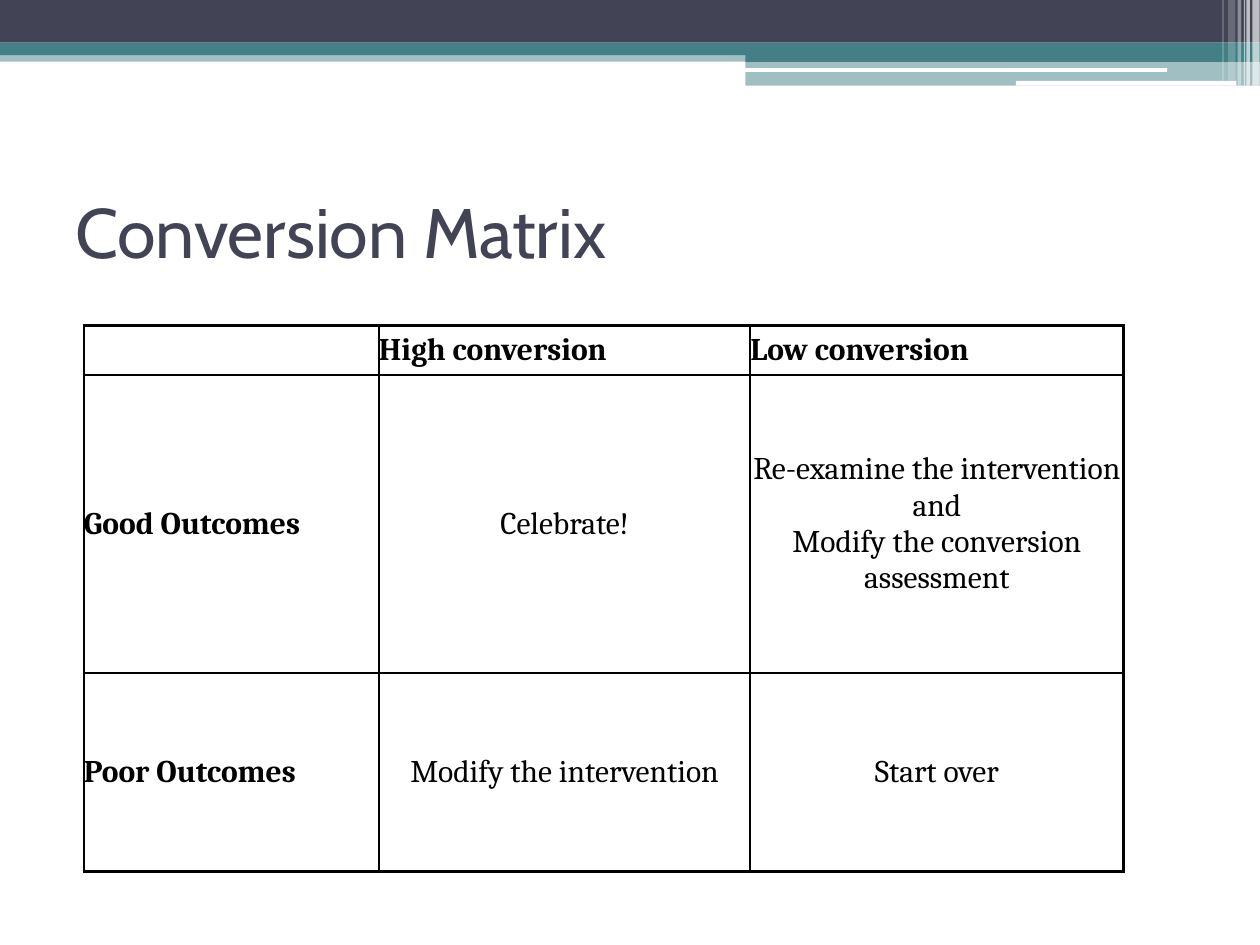
from lxml.etree import SubElement
from pptx import Presentation
from pptx.dml.color import RGBColor
from pptx.enum.shapes import MSO_SHAPE as Preset
from pptx.enum.text import MSO_ANCHOR as Anchor, PP_ALIGN as Align
from pptx.oxml.ns import qn
from pptx.util import Pt

SLATE, TEAL, WHITE, BLACK = "424456", "438086", "FFFFFF", "000000"
BANDS = [
    (0, 28.8, 720, 6.5, TEAL, 50),
    (0, 0, 720, 24.4, SLATE, 100),
    (0, 24.4, 720, 7.2, TEAL, 100),
    (426, 28.2, 294, 7.2, TEAL, 100),
    (426, 34.7, 294, 14.2, TEAL, 50),
]
HIGHLIGHTS = [(425.8, 38.9, 241.2, 2.2), (580.5, 46.2, 126, 2.7)]
STRIPES = [
    (715.6, 4.2, 48.9, 65),
    (712.2, 2, 48.9, 65),
    (710.8, 0.7, 48.9, 60),
    (707.2, 2, 48.9, 40),
    (701.8, 4.2, 46.1, 20),
    (698.5, 0.7, 46.1, 30),
]
MATRIX = [
    ["", "High conversion", "Low conversion"],
    ["Good Outcomes", "Celebrate!",
     "Re-examine the intervention\nand\nModify the conversion assessment"],
    ["Poor Outcomes", "Modify the intervention", "Start over"],
]
COLUMN_WIDTHS = [168.5, 212.3, 213.2]
ROW_HEIGHTS = [28.4, 170.2, 113.4]


def color(value):
    """Turn a hex string into a colour."""
    return RGBColor.from_string(value)


def add_block(slide, box, fill, opacity=100, preset=Preset.RECTANGLE):
    """Add a plain block without outline, with opacity in percent."""
    shape = slide.shapes.add_shape(preset, *map(Pt, box))
    shape.shadow.inherit = False
    shape.line.fill.background()
    shape.fill.solid()
    shape.fill.fore_color.rgb = color(fill)
    if opacity < 100:
        paint = shape.fill._xPr.find(f".//{qn('a:srgbClr')}")
        SubElement(paint, qn("a:alpha"), val=str(opacity * 1000))


def add_text(paragraph, text, font, size, fill, bold=False):
    """Add the lines of a text as runs parted by line breaks."""
    for index, line in enumerate(text.split("\n")):
        if index:
            paragraph.add_line_break()
        run = paragraph.add_run()
        run.text = line
        run.font.name, run.font.size, run.font.bold = font, Pt(size), bold
        run.font.color.rgb = color(fill)


def add_header(slide, left, top):
    """Draw the header bands, their white lines and the stripes at the right."""
    for x, y, width, height, fill, opacity in BANDS:
        add_block(slide, (left + x, top + y, width, height), fill, opacity)
    for x, y, width, height in HIGHLIGHTS:
        add_block(slide, (left + x, top + y, width, height), WHITE,
                  preset=Preset.ROUNDED_RECTANGLE)
    for x, width, height, opacity in STRIPES:
        add_block(slide, (left + x, top, width, height), WHITE, opacity)


def add_title(slide, box, text):
    """Add the slide title, centred vertically in its box."""
    frame = slide.shapes.add_textbox(*map(Pt, box)).text_frame
    frame.word_wrap = True
    frame.vertical_anchor = Anchor.MIDDLE
    add_text(frame.paragraphs[0], text, "Cabin", 40, SLATE)


def set_borders(cell, fill, width):
    """Draw a line on all four sides of a cell."""
    properties = cell._tc.get_or_add_tcPr()
    for index, side in enumerate(("lnL", "lnR", "lnT", "lnB")):
        line = properties.makeelement(qn(f"a:{side}"), {"w": str(Pt(width))})
        SubElement(SubElement(line, qn("a:solidFill")), qn("a:srgbClr"), val=fill)
        properties.insert(index, line)


def add_matrix(slide, left, top):
    """Add the table of outcomes against conversion."""
    box = (left, top, sum(COLUMN_WIDTHS), sum(ROW_HEIGHTS))
    table = slide.shapes.add_table(len(MATRIX), len(MATRIX[0]), *map(Pt, box)).table
    table.first_row = table.horz_banding = False
    for column, width in zip(table.columns, COLUMN_WIDTHS):
        column.width = Pt(width)
    for row, height in zip(table.rows, ROW_HEIGHTS):
        row.height = Pt(height)
    for row_index, texts in enumerate(MATRIX):
        for column_index, text in enumerate(texts):
            cell = table.cell(row_index, column_index)
            label = row_index == 0 or column_index == 0
            cell.fill.background()
            cell.vertical_anchor = Anchor.MIDDLE
            cell.margin_left = cell.margin_right = 0
            cell.margin_top = cell.margin_bottom = 0
            set_borders(cell, BLACK, 1.5)
            paragraph = cell.text_frame.paragraphs[0]
            paragraph.alignment = Align.LEFT if label else Align.CENTER
            if text:
                add_text(paragraph, text, "Cambria", 18, BLACK, label)


def main():
    """Build the slide and save it."""
    presentation = Presentation()
    presentation.slide_width, presentation.slide_height = Pt(720), Pt(540)
    slide = presentation.slides.add_slide(presentation.slide_layouts[6])
    add_header(slide, 0, 0)
    add_title(slide, (36, 90, 648, 84), "Conversion Matrix")
    add_matrix(slide, 48, 186)
    presentation.save("out.pptx")


if __name__ == "__main__":
    main()
